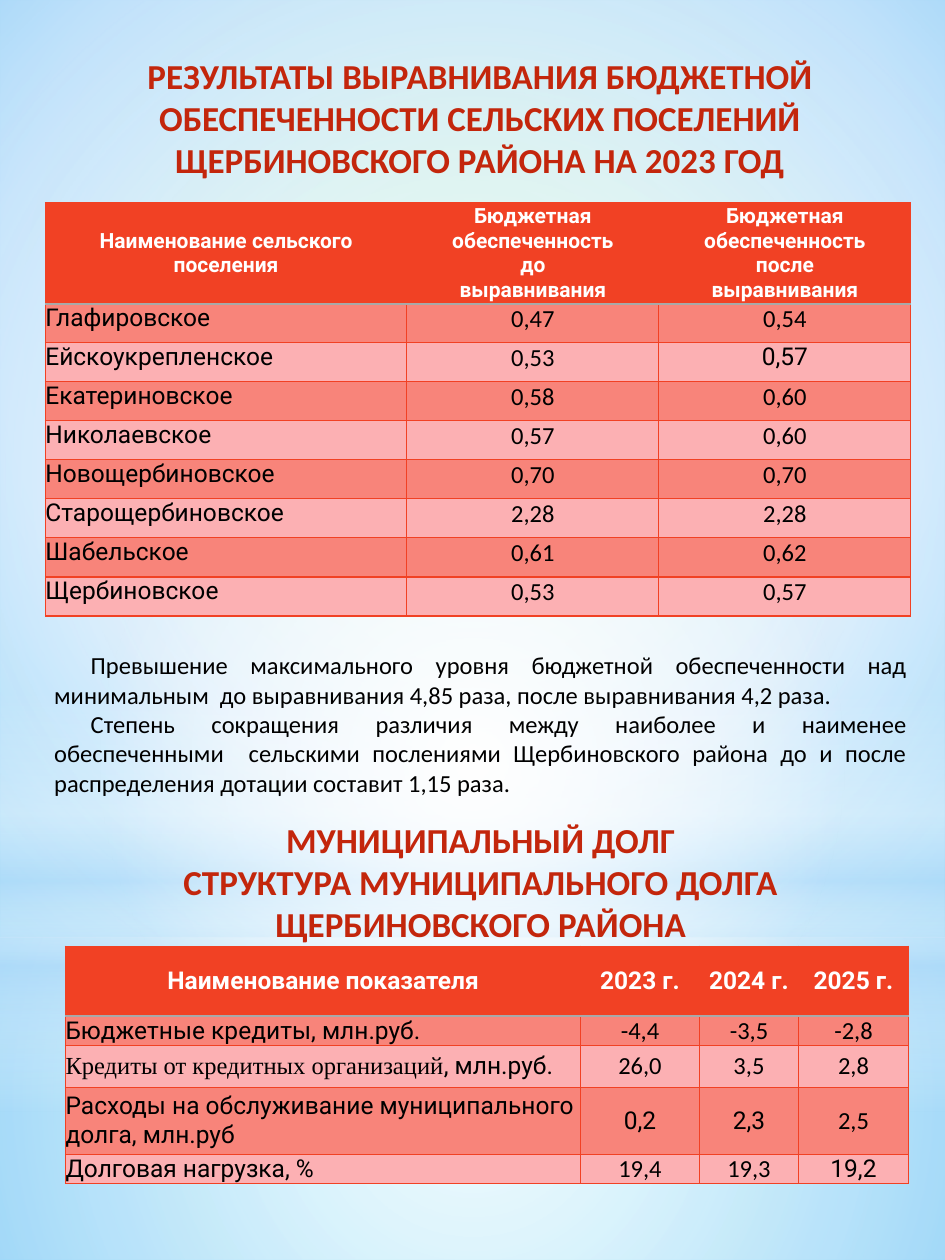
import pptx
import pptx.util
import pptx.dml.color
import pptx.enum.shapes
import pptx.enum.text
import pptx.oxml
import pptx.oxml.ns

Inches, Pt = pptx.util.Inches, pptx.util.Pt
RGB = pptx.dml.color.RGBColor.from_string
SHAPE = pptx.enum.shapes.MSO_SHAPE
ALIGN = pptx.enum.text.PP_ALIGN
ANCHOR = pptx.enum.text.MSO_ANCHOR
qn = pptx.oxml.ns.qn
NS = pptx.oxml.ns.nsdecls("a")

COLORS = {
    "title": "C3260C", "text": "000000", "white": "FFFFFF",
    "sky": "B4DCFA", "mint": "9EE2CF", "azure": "5ECCF3",
    "header": "F14124", "dark_row": "F8847A", "light_row": "FCB0B3",
    "border": "F14124", "rule": "A9A9A9",
}


def write_text(p, text, font="Calibri", size=14, color="text", bold=False,
               align=ALIGN.LEFT, left=0, right=0, indent=0, before=0):
    p.alignment = align
    p.space_before = Pt(before)
    pPr = p._p.get_or_add_pPr()
    for name, value in (("marL", left), ("marR", right), ("indent", indent)):
        pPr.set(name, str(Inches(value)))
    r = p.add_run()
    r.text = text
    r.font.name, r.font.size, r.font.bold = font, Pt(size), bold
    r.font.color.rgb = RGB(COLORS[color])


def set_gradient(parent, stops, center=None):
    """Swap the solid fill in parent for a gradient: circular around center, else vertical."""
    gs = "".join(
        f'<a:gs pos="{pos * 1000}"><a:srgbClr val="{COLORS[color]}">'
        f'<a:alpha val="{alpha * 1000}"/></a:srgbClr></a:gs>'
        for pos, color, alpha in stops)
    if center:
        sides = " ".join(f'{s}="{v * 1000}"' for s, v in zip("ltrb", center))
        way = f'<a:path path="circle"><a:fillToRect {sides}/></a:path>'
    else:
        way = '<a:lin ang="5400000" scaled="0"/>'
    grad = pptx.oxml.parse_xml(
        f'<a:gradFill {NS} rotWithShape="1"><a:gsLst>{gs}</a:gsLst>{way}</a:gradFill>')
    parent.replace(parent.find(qn("a:solidFill")), grad)


class SlideBuilder:
    def __init__(self, prs):
        self.slide = prs.slides.add_slide(prs.slide_layouts[6])

    def background(self, stops, center):
        fill = self.slide.background.fill
        fill.solid()
        fill.fore_color.rgb = RGB(COLORS["sky"])
        set_gradient(self.slide.element.find(".//" + qn("p:bgPr")), stops, center)

    def glow(self, kind, top, height, stops, center=(50, 50, 50, 50)):
        sp = self.slide.shapes.add_shape(
            kind, 0, Inches(top), Inches(7.5), Inches(height))
        sp.shadow.inherit = False
        sp.line.fill.background()
        sp.fill.solid()
        sp.fill.fore_color.rgb = RGB(COLORS["white"])
        set_gradient(sp._element.spPr, stops, center)

    def text_box(self, x, y, w, h, paragraphs):
        sp = self.slide.shapes.add_textbox(Inches(x), Inches(y), Inches(w), Inches(h))
        tf = sp.text_frame
        tf.word_wrap = True
        tf.auto_size = pptx.enum.text.MSO_AUTO_SIZE.SHAPE_TO_FIT_TEXT
        tf.margin_left = tf.margin_right = tf.margin_top = tf.margin_bottom = 0
        for i, (text, fmt) in enumerate(paragraphs):
            p = tf.add_paragraph() if i else tf.paragraphs[0]
            write_text(p, text, **fmt)

    def borders(self, cell, row):
        tcPr = cell._tc.get_or_add_tcPr()
        for i, side in enumerate("LRTB"):
            under_header = (row, side) in ((0, "B"), (1, "T"))
            color, width = ("rule", 1.25) if under_header else ("border", 0.75)
            tcPr.insert(i, pptx.oxml.parse_xml(
                f'<a:ln{side} {NS} w="{Pt(width)}"><a:solidFill>'
                f'<a:srgbClr val="{COLORS[color]}"/></a:solidFill></a:ln{side}>'))

    def table(self, x, y, widths, heights, rows, header_size, header_insets,
              fonts, body_anchor):
        """fonts maps (row, column) to a font where it differs from the usual one."""
        frame = self.slide.shapes.add_table(
            len(rows), len(widths), Inches(x), Inches(y),
            Inches(sum(widths)), Inches(sum(heights)))
        tbl = frame.table
        for col, w in zip(tbl.columns, widths):
            col.width = Inches(w)
        for row, h in zip(tbl.rows, heights):
            row.height = Inches(h)
        for i, values in enumerate(rows):
            for j, text in enumerate(values):
                cell = tbl.cell(i, j)
                cell.margin_left = cell.margin_right = 0
                cell.margin_top = cell.margin_bottom = 0
                cell.fill.solid()
                if i == 0:
                    fill, cell.vertical_anchor = "header", ANCHOR.MIDDLE
                    fmt = dict(font="Roboto", size=header_size, color="white",
                               bold=True, align=ALIGN.CENTER,
                               left=header_insets[j], right=header_insets[j])
                else:
                    fill = "dark_row" if i % 2 else "light_row"
                    cell.vertical_anchor = body_anchor
                    fmt = dict(font=fonts.get((i, j), "Calibri" if j else "Roboto"),
                               align=ALIGN.CENTER if j else ALIGN.LEFT)
                cell.fill.fore_color.rgb = RGB(COLORS[fill])
                parts = text if isinstance(text, tuple) else (text,)
                write_text(cell.text_frame.paragraphs[0], parts[0], **fmt)
                for part in parts[1:]:
                    write_text(cell.text_frame.paragraphs[0], part,
                               **{**fmt, "font": "Roboto"})
                self.borders(cell, i)


def main():
    prs = pptx.Presentation()
    prs.slide_width, prs.slide_height = Inches(7.5), Inches(10)
    s = SlideBuilder(prs)

    s.background([(0, "mint", 100), (60, "sky", 100), (100, "azure", 100)],
                 (20, 10, 20, 60))
    s.glow(SHAPE.RECTANGLE, 7.44, 2.56,
           [(0, "white", 91), (37, "white", 76), (100, "sky", 79)])
    s.glow(SHAPE.RECTANGLE, 0, 7.44,
           [(0, "white", 89), (48, "white", 62), (100, "sky", 79)])
    s.glow(SHAPE.RECTANGLE, 5.49, 3.33,
           [(0, "white", 0), (29, "white", 30), (45, "sky", 40),
            (55, "white", 26), (65, "sky", 60), (100, "white", 0)], center=None)
    s.glow(SHAPE.OVAL, 2.33, 7.44, [(0, "white", 100), (56, "white", 0)])

    heading = dict(size=20, color="title", bold=True, align=ALIGN.CENTER, left=0.01)
    body = dict(align=ALIGN.JUSTIFY, left=0.01, indent=0.29)
    s.text_box(0.39, 0.43, 6.83, 1.01, [
        ("РЕЗУЛЬТАТЫ ВЫРАВНИВАНИЯ БЮДЖЕТНОЙ ОБЕСПЕЧЕННОСТИ СЕЛЬСКИХ ПОСЕЛЕНИЙ "
         "ЩЕРБИНОВСКОГО РАЙОНА НА 2023 ГОД", heading)])
    s.text_box(0.42, 5.16, 6.78, 2.35, [
        ("Превышение  максимального  уровня  бюджетной  обеспеченности  над "
         "минимальным  до выравнивания 4,85 раза, после выравнивания 4,2 раза.", body),
        ("Степень  сокращения  различия  между  наиболее  и  наименее "
         "обеспеченными  сельскими послениями Щербиновского района до и после "
         "распределения дотации составит 1,15 раза.", body),
        ("МУНИЦИПАЛЬНЫЙ ДОЛГ", {**heading, "before": 12}),
        ("СТРУКТУРА МУНИЦИПАЛЬНОГО ДОЛГА ЩЕРБИНОВСКОГО РАЙОНА", heading)])

    settlements = [
        ("Наименование сельского поселения",
         "Бюджетная обеспеченность до выравнивания",
         "Бюджетная обеспеченность после выравнивания"),
        ("Глафировское", "0,47", "0,54"),
        ("Ейскоукрепленское", "0,53", "0,57"),
        ("Екатериновское", "0,58", "0,60"),
        ("Николаевское", "0,57", "0,60"),
        ("Новощербиновское", "0,70", "0,70"),
        ("Старощербиновское", "2,28", "2,28"),
        ("Шабельское", "0,61", "0,62"),
        ("Щербиновское", "0,53", "0,57"),
    ]
    s.table(0.36, 1.61, [2.87, 2, 2], [0.79] + [0.31] * 8, settlements,
            header_size=12, header_insets=[0.32, 0.32, 0.2],
            fonts={(2, 2): "Roboto"}, body_anchor=ANCHOR.TOP)

    debt = [
        ("Наименование показателя", "2023 г.", "2024 г.", "2025 г."),
        ("Бюджетные кредиты, млн.руб.", "-4,4", "-3,5", "-2,8"),
        (("Кредиты от кредитных организаций", ", млн.руб."), "26,0", "3,5", "2,8"),
        ("Расходы на обслуживание муниципального долга, млн.руб", "0,2", "2,3", "2,5"),
        ("Долговая нагрузка, %", "19,4", "19,3", "19,2"),
    ]
    s.table(0.52, 7.51, [4.09, 0.94, 0.79, 0.87], [0.55, 0.24, 0.33, 0.53, 0.23],
            debt, header_size=14, header_insets=[0] * 4,
            fonts={(2, 0): "Times New Roman", (3, 1): "Roboto",
                   (3, 2): "Roboto", (4, 3): "Roboto"},
            body_anchor=ANCHOR.MIDDLE)
    prs.save("out.pptx")


if __name__ == "__main__":
    main()
